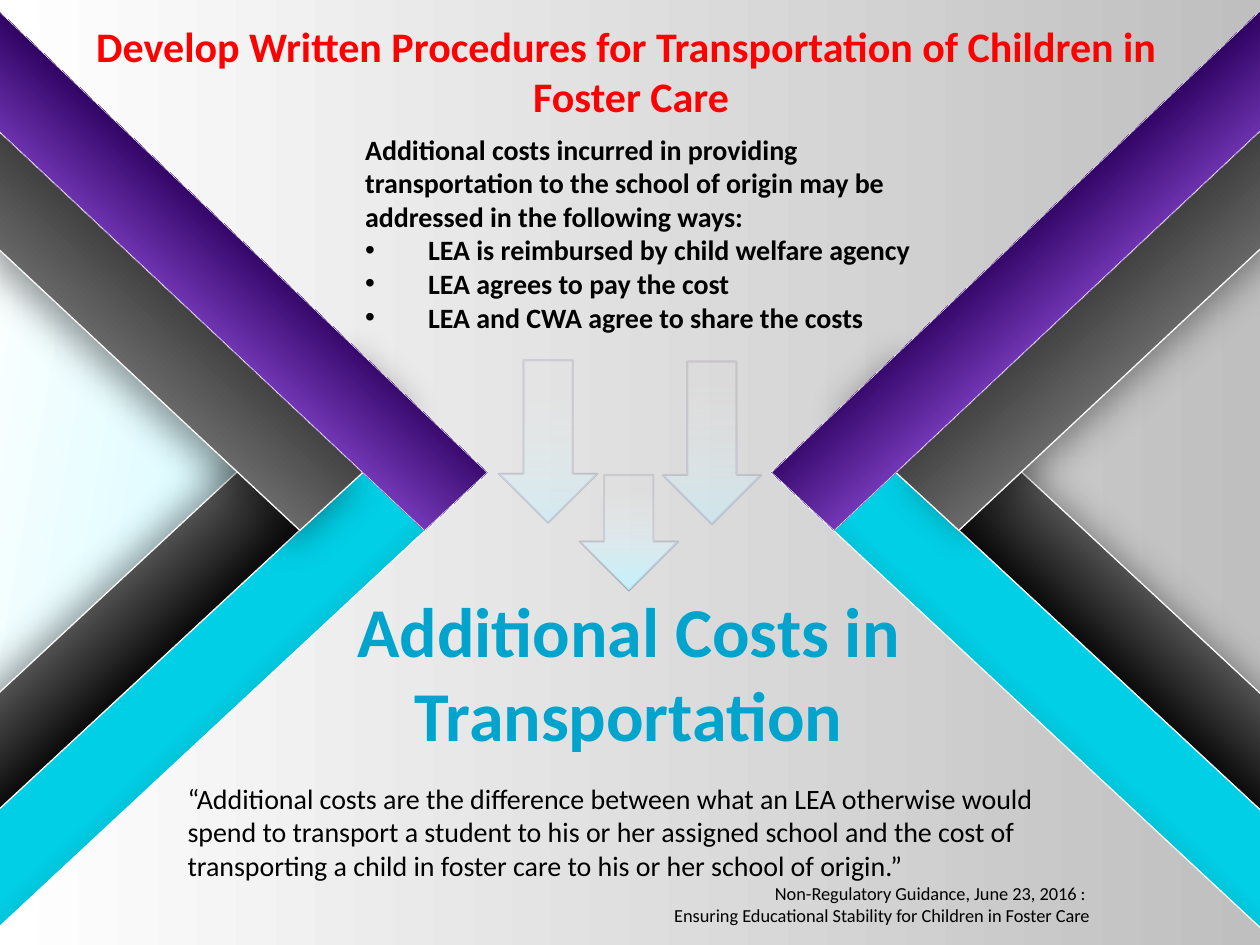
from dataclasses import dataclass
from lxml import etree
from pptx import Presentation
from pptx.dml.color import RGBColor
from pptx.enum.shapes import MSO_SHAPE
from pptx.enum.text import MSO_ANCHOR, PP_ALIGN
from pptx.oxml.ns import qn
from pptx.util import Pt

DOWN_ARROW = MSO_SHAPE.DOWN_ARROW
TOP = MSO_ANCHOR.TOP
LEFT, CENTER, RIGHT = PP_ALIGN.LEFT, PP_ALIGN.CENTER, PP_ALIGN.RIGHT


@dataclass(frozen=True)
class Theme:
    font: str = "Calibri"
    title: str = "FF0000"
    heading: str = "01A4CD"
    text: str = "000000"
    edge: str = "FFFFFF"
    shadow: str = "000000"
    arrow_edge: str = "1E003F"
    title_size: float = 24
    heading_size: float = 40
    body_size: float = 16
    source_size: float = 10.5
    page: tuple = ((0, "FFFFFF"), (100, "BFBFBF"))
    wedge: tuple = ((0, "FFFFFF"), (72, "C7F9FF"))
    black: tuple = ((38, "595959"), (53, "0D0D0D"))
    cyan: tuple = ((50, "01CFE6"), (63, "019BAC"))
    gray: tuple = ((28, "808080"), (55, "404040"))
    purple: tuple = ((28, "AD65FF"), (55, "2C005E"))
    arrow: tuple = ((13, "F2F2F2"), (100, "C2F3FF"))


THEME = Theme()
WIDTH, HEIGHT = 720, 540
MIRROR_SUM = 719.3

WEDGE = [(0, 517), (-0.7, 14.4), (270, 269.3)]

# fmt: off
BANDS = [
    ([(-1.4, 463.6), (242.9, 236.9), (207.4, 203), (-1.4, 396.7)],
     THEME.black, 47, 0.75, ((8, 180), (4, 25))),
    ([(-1.4, 530.6), (278.6, 270), (242.6, 236.9), (-1.4, 463.3)],
     THEME.cyan, 47, 0.75, None),
    ([(-1.4, 74.2), (207.4, 270), (171.4, 303.1), (-1.4, 141.8)],
     THEME.gray, 312, 0.75, ((8, 135), (6, 0))),
    ([(-1.4, 5.8), (278.3, 270), (242.6, 303.1), (-1.4, 74.2)],
     THEME.purple, 312, 0.25, None),
]
# fmt: on

ARROWS = [
    ((285.1, 205.9, 56.2, 92.9), (0, 50)),
    ((331.2, 271.4, 56.2, 66.2), (0, 100)),
    ((378.7, 206.6, 56.2, 92.9), (0, 50)),
]

TITLE = [("Develop Written Procedures for Transportation of Children in\v Foster Care",
          THEME.title_size, CENTER, False)]
WAYS = [("Additional costs incurred in providing transportation to the school of origin "
         "may be addressed in the following ways:", THEME.body_size, LEFT, False)]
WAYS += [(way, THEME.body_size, LEFT, True) for way in (
    "LEA is reimbursed by child welfare agency",
    "LEA agrees to pay the cost",
    "LEA and CWA agree to share the costs",
)]
HEADING = [("Additional Costs in Transportation", THEME.heading_size, CENTER, False)]
QUOTE = [
    ("“Additional costs are the difference between what an LEA otherwise would spend to "
     "transport a student to his or her assigned school and the cost of transporting a "
     "child in foster care to his or her school of origin.”", THEME.body_size, LEFT, False),
    ("Non-Regulatory Guidance, June 23, 2016 : ", THEME.source_size, RIGHT, False),
    ("Ensuring Educational Stability for Children in Foster Care",
     THEME.source_size, RIGHT, False),
]


def add_node(parent, tag, **attributes):
    return etree.SubElement(parent, qn(tag), {k: str(v) for k, v in attributes.items()})


def paint_gradient(fill, stops, angle):
    fill.gradient()
    fill.gradient_angle = (360 - angle) % 360
    for stop, (position, color) in zip(fill.gradient_stops, stops):
        stop.position = position / 100
        stop.color.rgb = RGBColor.from_string(color)


def set_line(shape, color, width):
    shape.line.color.rgb = RGBColor.from_string(color)
    shape.line.width = Pt(width)


def add_shadow(shape, distance, direction):
    effects = shape._element.spPr.find(qn("a:effectLst"))
    shadow = add_node(effects, "a:outerShdw", blurRad=Pt(22), dist=Pt(distance),
                      dir=direction * 60000, algn="ctr", rotWithShape=0)
    color = add_node(shadow, "a:srgbClr", val=THEME.shadow)
    add_node(color, "a:alpha", val=40000)


def add_outline(shapes, points, stops, angle):
    corners = [(Pt(x), Pt(y)) for x, y in points]
    builder = shapes.build_freeform(*corners[0])
    builder.add_line_segments(corners[1:], close=True)
    shape = builder.convert_to_shape()
    shape.shadow.inherit = False
    paint_gradient(shape.fill, stops, angle)
    return shape


def add_bands(page, mirrored):
    group = page.shapes.add_group_shape()
    for points, stops, angle, width, shadows in BANDS:
        if mirrored:
            points = [(MIRROR_SUM - x, y) for x, y in points]
            angle = (180 - angle) % 360
        band = add_outline(group.shapes, points, stops, angle)
        set_line(band, THEME.edge, width)
        if shadows:
            add_shadow(band, *shadows[mirrored])


def add_text(page, place, paragraphs, color, bold):
    frame = page.shapes.add_textbox(*map(Pt, place)).text_frame
    frame.word_wrap = True
    frame.vertical_anchor = TOP
    for index, (text, size, alignment, bulleted) in enumerate(paragraphs):
        para = frame.add_paragraph() if index else frame.paragraphs[0]
        para.text = text
        para.alignment = alignment
        para.font.name = THEME.font
        para.font.size = Pt(size)
        para.font.bold = bold
        para.font.color.rgb = RGBColor.from_string(color)
        if bulleted:
            properties = para._p.get_or_add_pPr()
            properties.set("marL", str(Pt(36)))
            properties.set("indent", str(-Pt(36)))
            bullet_font = etree.Element(qn("a:buFont"), typeface="Arial")
            bullet = etree.Element(qn("a:buChar"), char="•")
            properties.insert(0, bullet_font)
            properties.insert(1, bullet)


def add_arrow(page, place, opacities):
    arrow = page.shapes.add_shape(DOWN_ARROW, *map(Pt, place))
    arrow.shadow.inherit = False
    paint_gradient(arrow.fill, THEME.arrow, 90)
    set_line(arrow, THEME.arrow_edge, 1.25)
    colors = arrow._element.spPr.findall(".//" + qn("a:srgbClr"))
    for color, opacity in zip(colors, (*opacities, 10)):
        add_node(color, "a:alpha", val=opacity * 1000)


def main():
    deck = Presentation()
    deck.slide_width, deck.slide_height = Pt(WIDTH), Pt(HEIGHT)
    page = deck.slides.add_slide(deck.slide_layouts[6])
    paint_gradient(page.background.fill, THEME.page, 0)

    wedge = add_outline(page.shapes, WEDGE, THEME.wedge, 10)
    wedge.line.fill.background()
    add_text(page, (13, 7.9, 689.8, 65.5), TITLE, THEME.title, True)
    add_bands(page, False)
    add_text(page, (201.6, 72, 326.9, 143.3), WAYS, THEME.text, True)
    add_bands(page, True)
    add_text(page, (120.2, 331.9, 478.1, 104.4), HEADING, THEME.heading, True)
    add_text(page, (100.1, 442.8, 529.9, 90.7), QUOTE, THEME.text, False)
    for place, opacities in ARROWS:
        add_arrow(page, place, opacities)
    deck.save("out.pptx")


if __name__ == "__main__":
    main()
